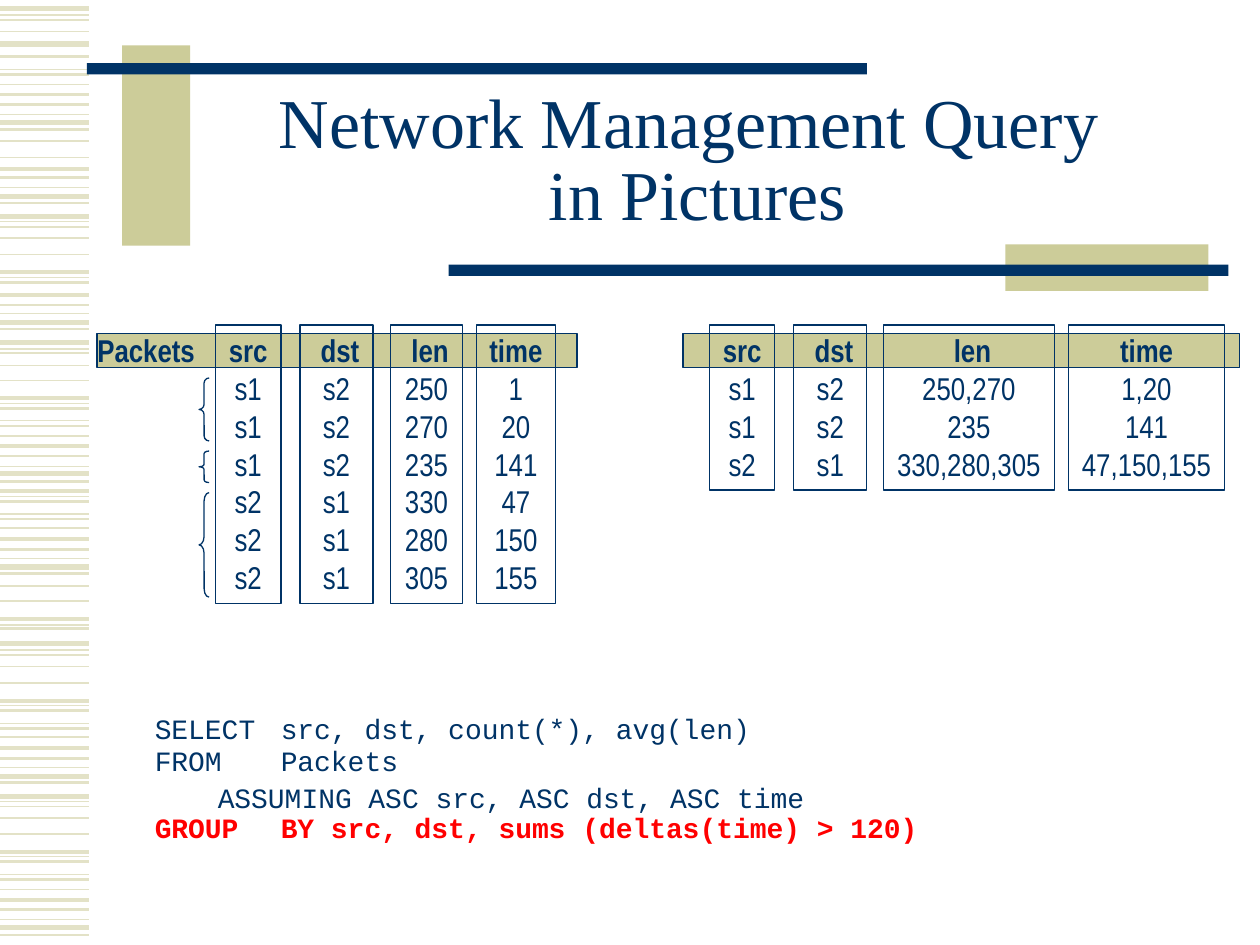
from copy import deepcopy
from dataclasses import dataclass

from lxml.etree import SubElement
from pptx import Presentation
from pptx.dml.color import RGBColor
from pptx.enum.shapes import MSO_CONNECTOR, MSO_SHAPE
from pptx.enum.text import MSO_ANCHOR, MSO_AUTO_SIZE, PP_ALIGN
from pptx.oxml.ns import qn
from pptx.util import Inches, Pt


@dataclass(frozen=True)
class Theme:
    navy: str = "003366"
    khaki: str = "CCCC99"
    stripe: str = "E3E2C7"
    red: str = "FF0000"
    outline: float = 0.75


THEME = Theme()
TITLE_FONT = {"name": "Times New Roman", "size": Pt(40), "bold": False}
CELL_FONT = {"name": "Arial Narrow", "size": Pt(18), "bold": False}
HEAD_FONT = {**CELL_FONT, "bold": True}
CODE_FONT = {"name": "Courier New", "size": Pt(16), "bold": False}
CODE_BOLD = {**CODE_FONT, "bold": True}
LEAD_FONT = {"name": "Times New Roman", "size": Pt(20), "bold": False}

TITLE = "Network Management Query \nin Pictures"

# Heights of the margin stripes, by line weight in points
STRIPES = {
    3: (0.07, 0.35, 0.97, 1.56, 1.72, 2.56, 2.72, 3.76, 4.5, 5.11, 6.16, 6.32, 7.36),
    2.25: (0.75, 1.34, 2.16, 2.34, 3.16, 3.54, 3.9, 4.28, 4.91, 5.56, 5.94, 6.76, 7.14),
    1.5: (0.45, 0.59, 0.83, 1.03, 1.41, 1.61, 2.24, 2.42, 2.61, 3.24, 3.38, 3.62, 3.82,
          3.98, 4.12, 4.36, 4.55, 4.99, 5.64, 5.78, 6.02, 6.21, 6.84, 6.98, 7.22, 7.42),
    1: (0.16, 0.25, 0.67, 1.12, 1.25, 1.8, 1.89, 2.02, 2.8, 2.9, 3.02, 3.46, 4.19, 4.65,
        4.77, 5.2, 5.29, 5.42, 5.85, 6.4, 6.49, 6.62, 7.06),
    0.75: (0.12, 0.55, 0.91, 1.49, 1.76, 2.2, 2.49, 2.77, 3.2, 3.34, 3.7, 3.94, 4.08,
           4.43, 4.96, 5.16, 5.6, 5.74, 6.09, 6.36, 6.8, 6.94, 7.3),
}
STRIPE_WIDTH = 0.71

TITLE_BARS = [
    ((0.97, 0.36, 0.54, 1.59), THEME.khaki),
    ((0.69, 0.5, 6.19, 0.09), THEME.navy),
    ((7.98, 1.94, 1.61, 0.37), THEME.khaki),
    ((3.56, 2.1, 6.19, 0.09), THEME.navy),
]

# Each relation: header band (left, width), then columns (left, width, header, values)
RELATIONS = [
    ((0.77, 3.81), [
        (1.71, 0.52, "src", "s1 s1 s1 s2 s2 s2"),
        (2.38, 0.58, " dst", "s2 s2 s2 s1 s1 s1"),
        (3.1, 0.57, " len", "250 270 235 330 280 305"),
        (3.78, 0.63, "time", "1 20 141 47 150 155"),
    ]),
    ((5.42, 4.42), [
        (5.63, 0.52, "src", "s1 s1 s2"),
        (6.3, 0.58, " dst", "s2 s2 s1"),
        (7.01, 1.36, " len", "250,270 235 330,280,305"),
        (8.48, 1.24, "time", "1,20 141 47,150,155"),
    ]),
]
RELATION_NAME = "Packets"
RELATION_TOP, ROW, PADDING = 2.58, 0.3, 0.11
BAND_TOP, BAND_HEIGHT = 2.65, 0.27

GROUP_HEIGHTS = (0.5, 0.25, 0.83)
GROUP_LEFT, GROUP_TOP, GROUP_WIDTH, GROUP_GAP = 1.58, 3, 0.08, 0.08

# Query paragraphs as (text, font, colour) runs
QUERY = [
    [("\t", LEAD_FONT, THEME.navy),
     ("SELECT\tsrc, dst, count(*), avg(len)\nFROM\tPackets", CODE_FONT, THEME.navy)],
    [("\t\tASSUMING ASC src, ASC dst, ASC time \n", CODE_FONT, THEME.navy),
     ("GROUP\tBY src, dst, sums (deltas(time) > 120)", CODE_BOLD, THEME.red)],
]


def box(left, top, width, height):
    return [Inches(length) for length in (left, top, width, height)]


def apply(target, formats):
    for attribute, value in formats.items():
        setattr(target, attribute, value)


def write(paragraph, text, font, color=THEME.navy):
    """Add text in one format, turning each newline into a line break."""
    for index, line in enumerate(text.split("\n")):
        if index:
            paragraph.add_line_break()
            paragraph._p.findall(qn("a:br"))[-1].append(deepcopy(run._r.rPr))
        if line:
            run = paragraph.add_run()
            run.text = line
            apply(run.font, font)
            run.font.color.rgb = RGBColor.from_string(color)


def write_centered(frame, lines):
    """Fill a frame with one centred paragraph per (text, font) pair."""
    for index, (text, font) in enumerate(lines):
        paragraph = frame.add_paragraph() if index else frame.paragraphs[0]
        paragraph.alignment = PP_ALIGN.CENTER
        write(paragraph, text, font)


def add_outline(slide, kind, area, fill=None, line=None):
    shape = slide.shapes.add_shape(kind, *box(*area))
    shape.shadow.inherit = False
    if fill:
        shape.fill.solid()
        shape.fill.fore_color.rgb = RGBColor.from_string(fill)
    else:
        shape.fill.background()
    if line:
        shape.line.color.rgb = RGBColor.from_string(line)
        shape.line.width = Pt(THEME.outline)
    else:
        shape.line.fill.background()
    return shape


def add_background(slide):
    for weight, heights in STRIPES.items():
        for y in heights:
            stripe = slide.shapes.add_connector(
                MSO_CONNECTOR.STRAIGHT, 0, Inches(y), Inches(STRIPE_WIDTH), Inches(y))
            stripe.line.color.rgb = RGBColor.from_string(THEME.stripe)
            stripe.line.width = Pt(weight)
            SubElement(stripe._element.spPr, qn("a:effectLst"))
    for area, fill in TITLE_BARS:
        add_outline(slide, MSO_SHAPE.RECTANGLE, area, fill)


def add_title(slide):
    title = slide.shapes.title
    apply(title, dict(zip(("left", "top", "width", "height"), box(1.5, 0.67, 8.07, 1.25))))
    apply(title.text_frame, {"vertical_anchor": MSO_ANCHOR.MIDDLE, "word_wrap": True,
                             "auto_size": MSO_AUTO_SIZE.NONE})
    write_centered(title.text_frame, [(TITLE, TITLE_FONT)])
    title.text_frame.paragraphs[0].line_spacing = 0.85


def add_relation(slide, band, columns):
    band_left, band_width = band
    add_outline(slide, MSO_SHAPE.RECTANGLE, (band_left, BAND_TOP, band_width, BAND_HEIGHT),
                THEME.khaki, THEME.navy)
    for left, width, header, values in columns:
        lines = [(header, HEAD_FONT)] + [(value, CELL_FONT) for value in values.split()]
        area = (left, RELATION_TOP, width, len(lines) * ROW + PADDING)
        column = add_outline(slide, MSO_SHAPE.RECTANGLE, area, line=THEME.navy)
        apply(column.text_frame, {"word_wrap": header == "src",
                                  "vertical_anchor": MSO_ANCHOR.TOP,
                                  "auto_size": MSO_AUTO_SIZE.SHAPE_TO_FIT_TEXT})
        write_centered(column.text_frame, lines)


def add_groups(slide):
    """Brace the packet rows that fall into the same group."""
    top = GROUP_TOP
    for height in GROUP_HEIGHTS:
        brace = add_outline(slide, MSO_SHAPE.LEFT_BRACE,
                            (GROUP_LEFT, top, GROUP_WIDTH, height), line=THEME.navy)
        brace.adjustments[0] = height
        top += height + GROUP_GAP


def add_query(slide):
    frame = slide.shapes.add_textbox(*box(0.75, 5.58, 8.75, 1.83)).text_frame
    frame.word_wrap = True
    for index, runs in enumerate(QUERY):
        paragraph = frame.add_paragraph() if index else frame.paragraphs[0]
        apply(paragraph, {"line_spacing": 0.9, "space_before": Pt(4)})
        properties = paragraph._p.get_or_add_pPr()
        properties.set("marL", str(Inches(0.38)))
        properties.set("indent", str(-Inches(0.38)))
        for text, font, color in runs:
            write(paragraph, text, font, color)


def main():
    deck = Presentation()
    deck.slide_width, deck.slide_height = Inches(10), Inches(7.5)
    slide = deck.slides.add_slide(deck.slide_layouts[5])
    add_background(slide)
    add_title(slide)
    for band, columns in RELATIONS:
        add_relation(slide, band, columns)
    name = slide.shapes.add_textbox(*box(0.67, RELATION_TOP, 0.98, 0.4)).text_frame
    apply(name, {"word_wrap": False, "auto_size": MSO_AUTO_SIZE.SHAPE_TO_FIT_TEXT})
    write_centered(name, [(RELATION_NAME, HEAD_FONT)])
    add_groups(slide)
    add_query(slide)
    deck.save("out.pptx")


if __name__ == "__main__":
    main()
